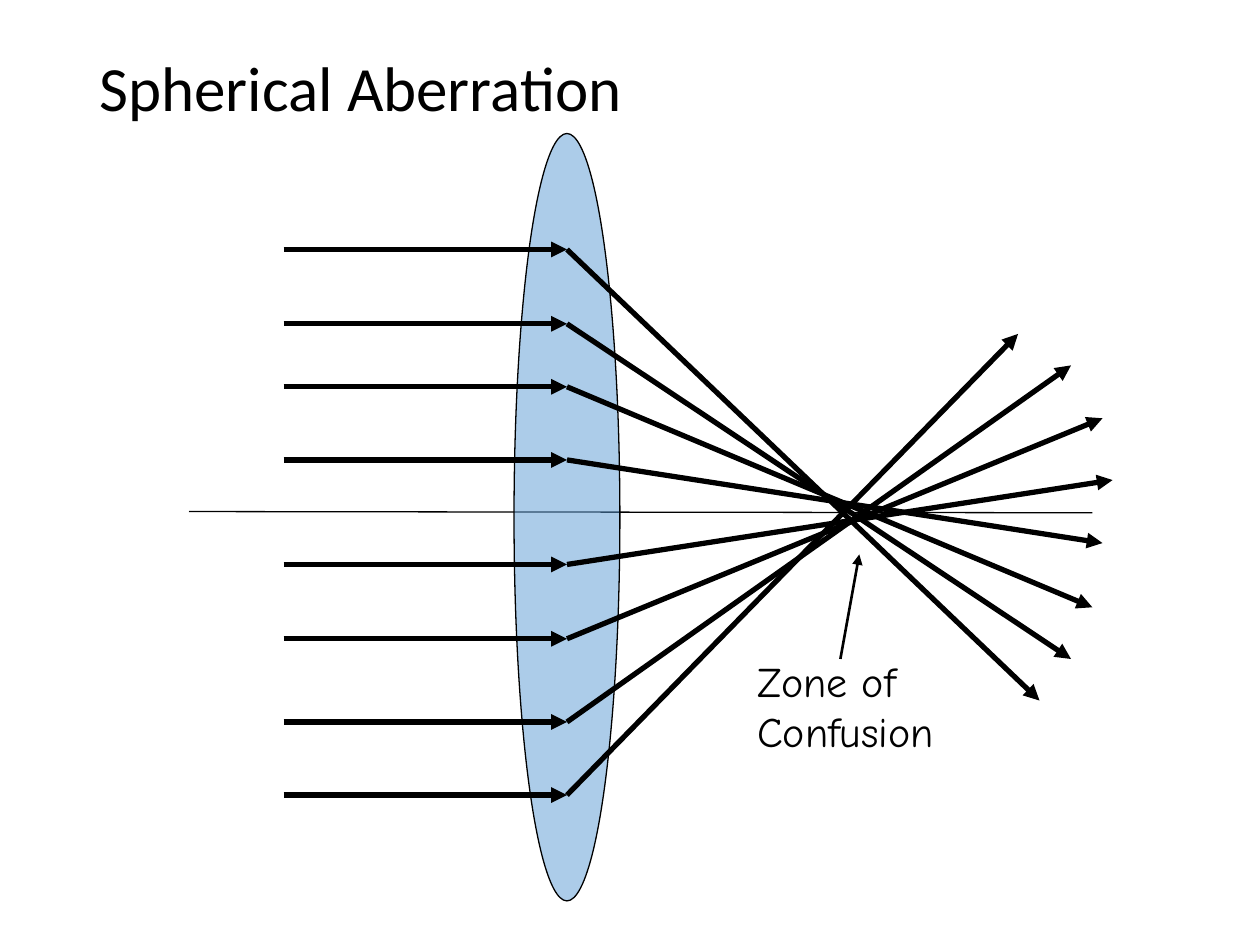
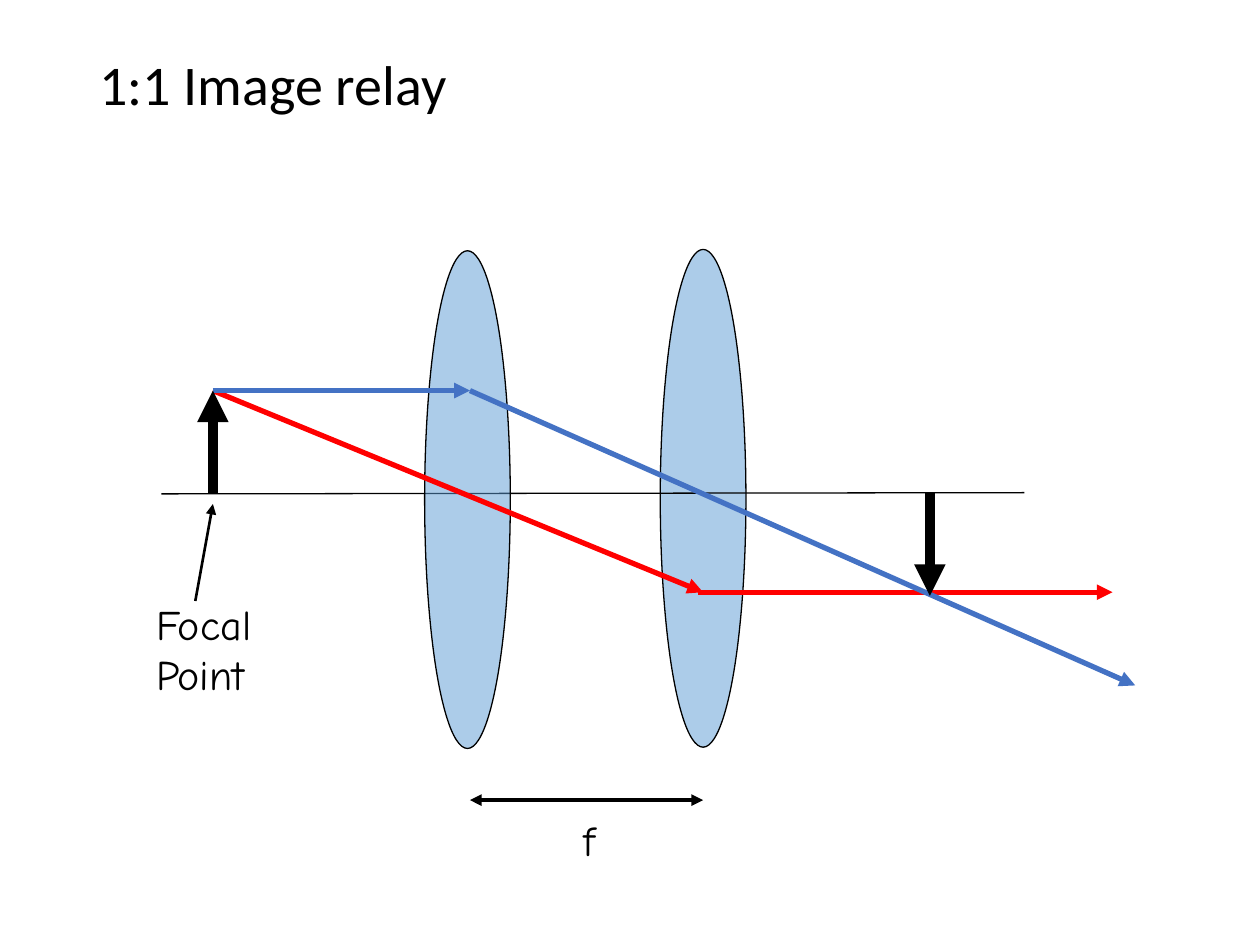
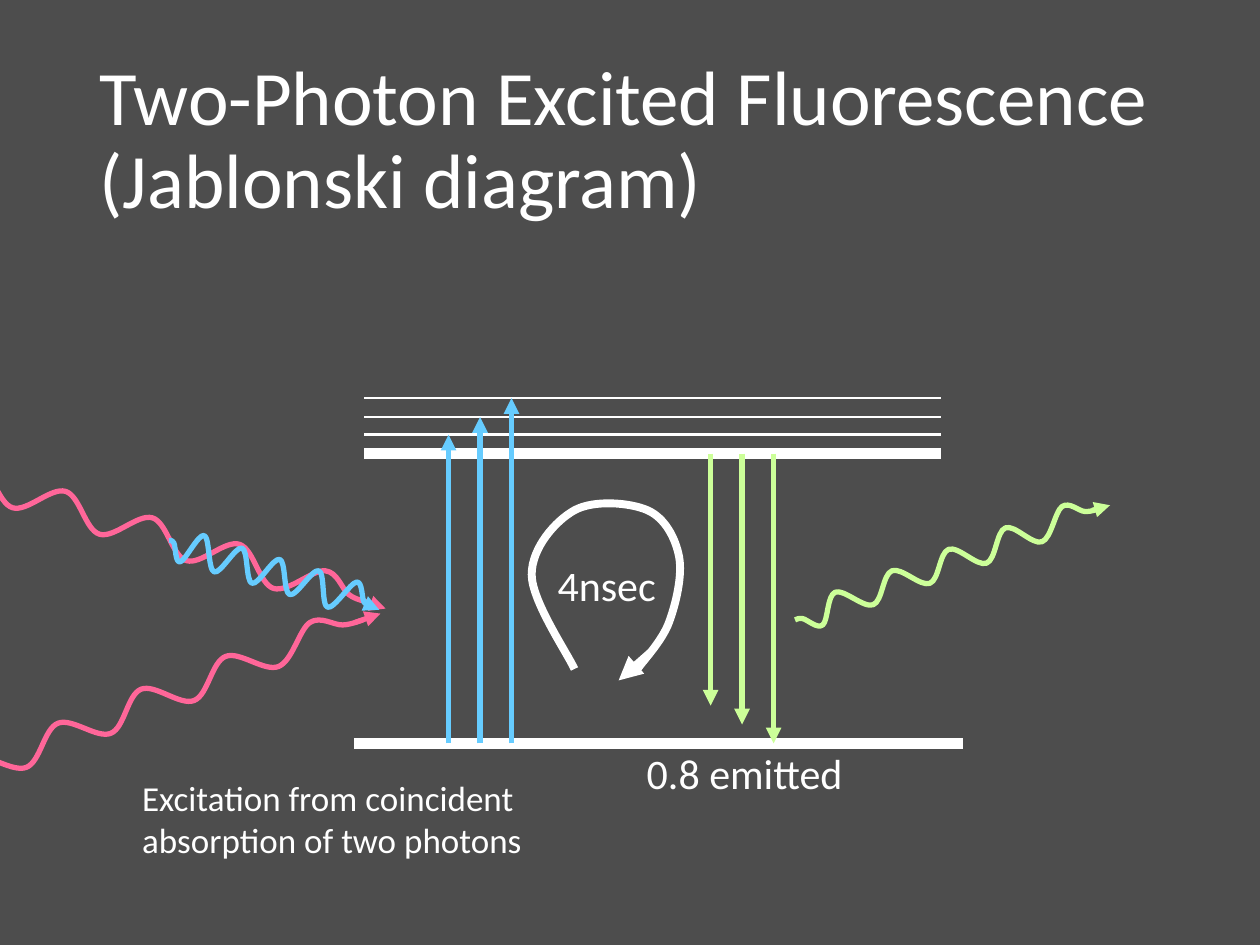
from dataclasses import dataclass

from lxml.etree import SubElement
from pptx import Presentation
from pptx.dml.color import RGBColor
from pptx.enum.shapes import MSO_CONNECTOR, MSO_SHAPE
from pptx.enum.text import MSO_ANCHOR, PP_ALIGN
from pptx.oxml.ns import qn
from pptx.util import Inches, Pt


@dataclass(frozen=True)
class Theme:
    white: str = "FFFFFF"
    black: str = "000000"
    gray: str = "4D4D4D"
    lens: str = "5B9BD5"
    red: str = "FF0000"
    blue: str = "4472C4"
    sky: str = "66CCFF"
    lime: str = "CCFF99"
    pink: str = "FF6699"
    font: str = "Calibri"
    hand_font: str = "Comic Neue"
    label: int = 24
    note: int = 20
    hairline: float = 0.75
    thin: float = 1.5
    ray: float = 3
    loop: float = 4.5
    heavy: float = 6


THEME = Theme()
TITLE_BOX = (0.69, 0.4, 8.62, 1.45)

# Spherical aberration: height where a ray meets the lens, then its far end
RAY_START, LENS_X = 2.25, 4.5
BENT_RAYS = [
    (1.98, (8.25, 5.56)), (2.57, (8.5, 5.23)), (3.07, (8.67, 4.82)), (3.65, (8.75, 4.31)),
    (4.48, (8.83, 3.81)), (5.07, (8.75, 3.32)), (5.73, (8.5, 2.9)), (6.31, (8.08, 2.65)),
]

# Image relay: (start, end, colour)
RELAY_RAYS = [
    ((5.54, 4.7), (8.83, 4.7), THEME.red),
    ((1.69, 3.1), (5.58, 4.7), THEME.red),
    ((1.69, 3.1), (3.73, 3.1), THEME.blue),
    ((3.73, 3.1), (9.01, 5.44), THEME.blue),
]
RELAY_OBJECTS = [((1.69, 3.91), (1.69, 3.1)), ((7.38, 3.91), (7.38, 4.73))]

# Jablonski diagram
GROUND, EXCITED = 5.9, 3.6
LEVELS = [
    (2.81, 7.64, GROUND, THEME.heavy), (2.89, 7.47, EXCITED, THEME.heavy),
    (2.89, 7.47, 3.45, THEME.thin), (2.89, 7.47, 3.31, THEME.thin), (2.89, 7.47, 3.16, THEME.thin),
]
# (first x, start height, end heights, colour)
TRANSITIONS = [
    (3.56, GROUND, (3.45, 3.31, 3.16), THEME.sky),
    (5.64, EXCITED, (5.6, 5.75, GROUND), THEME.lime),
]
TRANSITION_STEP = 0.25
# Curves: (points passed through, arrow start, arrow end, colour, width)
CURVES = [
    ([(6.31, 4.92), (6.37, 4.91), (6.53, 4.96), (6.63, 4.7), (6.93, 4.8), (7.08, 4.53),
      (7.38, 4.63), (7.53, 4.36), (7.83, 4.47), (7.98, 4.19), (8.27, 4.3), (8.43, 4.02),
      (8.61, 4.06), (8.72, 4.04)], (8.67, 4.05), (8.81, 4.01), THEME.lime, THEME.ray),
    ([(-0.76, 3.63), (-0.67, 3.67), (-0.52, 3.84), (-0.17, 3.69), (0.1, 4.03), (0.52, 3.9),
      (0.79, 4.24), (1.21, 4.11), (1.48, 4.45), (1.9, 4.32), (2.17, 4.67), (2.58, 4.53),
      (2.77, 4.72), (2.92, 4.78)], (2.86, 4.76), (3.06, 4.83), THEME.pink, THEME.ray),
    ([(4.56, 5.31), (4.22, 4.56), (4.56, 4.05), (5.14, 4.05), (5.39, 4.42), (5.31, 4.94),
      (5.06, 5.31)], (5.16, 5.18), (4.91, 5.4), THEME.white, THEME.loop),
    ([(-0.71, 6.32), (-0.62, 6.3), (-0.39, 6.33), (-0.21, 6.01), (0.21, 6.09), (0.46, 5.74),
      (0.88, 5.82), (1.12, 5.47), (1.54, 5.56), (1.79, 5.21), (2.21, 5.29), (2.46, 4.94),
      (2.72, 4.96), (2.88, 4.92)], (2.82, 4.94), (3.02, 4.87), THEME.pink, THEME.ray),
    ([(1.34, 4.29), (1.38, 4.31), (1.43, 4.46), (1.62, 4.25), (1.7, 4.54), (1.92, 4.35),
      (2, 4.63), (2.22, 4.44), (2.3, 4.72), (2.53, 4.53), (2.6, 4.82), (2.83, 4.62),
      (2.89, 4.78), (2.95, 4.81)], (2.92, 4.8), (3.01, 4.84), THEME.sky, THEME.ray),
]
JABLONSKI_LABELS = [((4.32, 4.39, 0.99, 0.5), "4nsec"), ((5.02, 5.88, 1.78, 0.5), "0.8 emitted")]


def rgb(color):
    return RGBColor.from_string(color)


def add_text(page, box, text, size, color=THEME.black, font=THEME.font, wrap=True,
             centered=False, anchor=MSO_ANCHOR.TOP, spacing=None):
    frame = page.shapes.add_textbox(*map(Inches, box)).text_frame
    frame.word_wrap = wrap
    frame.vertical_anchor = anchor
    frame.text = text
    for para in frame.paragraphs:
        para.alignment = PP_ALIGN.CENTER if centered else PP_ALIGN.LEFT
        if spacing:
            para.line_spacing = spacing
        for span in para.runs:
            span.font.name = font
            span.font.size = Pt(size)
            span.font.color.rgb = rgb(color)


def add_page(deck, title, size, background=THEME.white, color=THEME.black, anchor=MSO_ANCHOR.TOP):
    page = deck.slides.add_slide(deck.slide_layouts[6])
    page.background.fill.solid()
    page.background.fill.fore_color.rgb = rgb(background)
    add_text(page, TITLE_BOX, title, size, color, anchor=anchor, spacing=0.9)
    return page


def set_line(shape, color, width):
    shape.line.color.rgb = rgb(color)
    shape.line.width = Pt(width)


def add_line(page, start, end, color=THEME.black, width=THEME.ray, arrows=()):
    """Draw a straight line; arrows names its ends: headEnd, tailEnd, in that order."""
    line = page.shapes.add_connector(MSO_CONNECTOR.STRAIGHT, *map(Inches, (*start, *end)))
    set_line(line, color, width)
    outline = line._element.spPr.find(qn("a:ln"))
    for arrow in arrows:
        SubElement(outline, qn(f"a:{arrow}"), type="triangle")
    SubElement(line._element.spPr, qn("a:effectLst"))


def add_arrow(page, start, end, color=THEME.black, width=THEME.ray):
    add_line(page, start, end, color, width, ["tailEnd"])


def add_lens(page, *box):
    lens = page.shapes.add_shape(MSO_SHAPE.OVAL, *map(Inches, box))
    lens.shadow.inherit = False
    lens.fill.solid()
    lens.fill.fore_color.rgb = rgb(THEME.lens)
    tint = lens._element.spPr.find(qn("a:solidFill"))[0]
    SubElement(tint, qn("a:alpha"), val="50000")
    set_line(lens, THEME.black, THEME.hairline)


def bend_segments(curve):
    """Turn the straight segments of a freeform into Bézier curves through its points."""
    outline = next(curve._element.iter(qn("a:path")))
    points = [(int(pt.get("x")), int(pt.get("y"))) for pt in outline.iter(qn("a:pt"))]
    padded = [points[0], *points, points[-1]]
    for segment in outline.findall(qn("a:lnTo")):
        outline.remove(segment)
    for before, start, end, after in zip(padded, padded[1:], padded[2:], padded[3:]):
        leaving = [s + (e - b) / 6 for b, s, e in zip(before, start, end)]
        arriving = [e - (a - s) / 6 for s, e, a in zip(start, end, after)]
        bend = SubElement(outline, qn("a:cubicBezTo"))
        for x, y in (leaving, arriving, end):
            SubElement(bend, qn("a:pt"), x=str(round(x)), y=str(round(y)))


def add_curve(page, points, color, width):
    vertices = [(Inches(x), Inches(y)) for x, y in points]
    builder = page.shapes.build_freeform(*vertices[0])
    builder.add_line_segments(vertices[1:], close=False)
    curve = builder.convert_to_shape()
    bend_segments(curve)
    curve.shadow.inherit = False
    curve.fill.background()
    set_line(curve, color, width)


def build_aberration(deck):
    page = add_page(deck, "Spherical Aberration", 36)
    add_line(page, (1.5, 4.06), (8.67, 4.07), width=THEME.hairline)
    add_lens(page, 4.08, 1.06, 0.84, 6.09)
    for height, far_end in BENT_RAYS:
        add_arrow(page, (RAY_START, height), (LENS_X, height))
        add_arrow(page, (LENS_X, height), far_end)
    add_text(page, (5.91, 5.15, 1.75, 1.03), "Zone of Confusion", THEME.label, font=THEME.hand_font)
    add_arrow(page, (6.67, 5.23), (6.82, 4.4), width=THEME.thin)


def build_relay(deck):
    page = add_page(deck, "1:1 Image relay", 32)
    # Lenses and optical axis
    add_lens(page, 5.24, 1.98, 0.68, 3.95)
    add_line(page, (1.28, 3.92), (8.13, 3.91), width=THEME.hairline)
    add_lens(page, 3.37, 1.99, 0.68, 3.95)
    # Focal point label
    add_text(page, (1.14, 4.7, 1.07, 1.03), "Focal\nPoint", THEME.label,
             font=THEME.hand_font, wrap=False)
    add_arrow(page, (1.55, 4.77), (1.69, 4), width=THEME.thin)
    # Rays, then object and image
    for start, end, color in RELAY_RAYS:
        add_arrow(page, start, end, color)
    for start, end in RELAY_OBJECTS:
        add_arrow(page, start, end, width=THEME.heavy)
    # Lens separation
    add_text(page, (4.49, 6.38, 0.37, 0.57), "f", THEME.label, font=THEME.hand_font,
             wrap=False, centered=True, anchor=MSO_ANCHOR.MIDDLE)
    add_line(page, (3.73, 6.35), (5.58, 6.35), width=2.25, arrows=["headEnd", "tailEnd"])


def build_jablonski(deck):
    page = add_page(deck, "Two-Photon Excited Fluorescence\v(Jablonski diagram)", 44,
                    THEME.gray, THEME.white, MSO_ANCHOR.MIDDLE)
    # Energy levels and transitions
    for left, right, height, width in LEVELS:
        add_line(page, (left, height), (right, height), THEME.white, width)
    for first_x, start, ends, color in TRANSITIONS:
        for index, end in enumerate(ends):
            x = first_x + index * TRANSITION_STEP
            add_arrow(page, (x, start), (x, end), color)
    # Photon waves and relaxation loop
    for points, start, end, color, width in CURVES:
        add_curve(page, points, color, width)
        add_arrow(page, start, end, color, width)
    # Labels
    for box, text in JABLONSKI_LABELS:
        add_text(page, box, text, THEME.label, THEME.white, wrap=False, centered=True,
                 anchor=MSO_ANCHOR.MIDDLE)
    add_text(page, (1.03, 6.11, 3.23, 1.26), "Excitation from coincident absorption of two photons",
             THEME.note, THEME.white)


def main():
    deck = Presentation()
    deck.slide_width, deck.slide_height = Inches(10), Inches(7.5)
    build_aberration(deck)
    build_relay(deck)
    build_jablonski(deck)
    deck.save("out.pptx")


if __name__ == "__main__":
    main()
